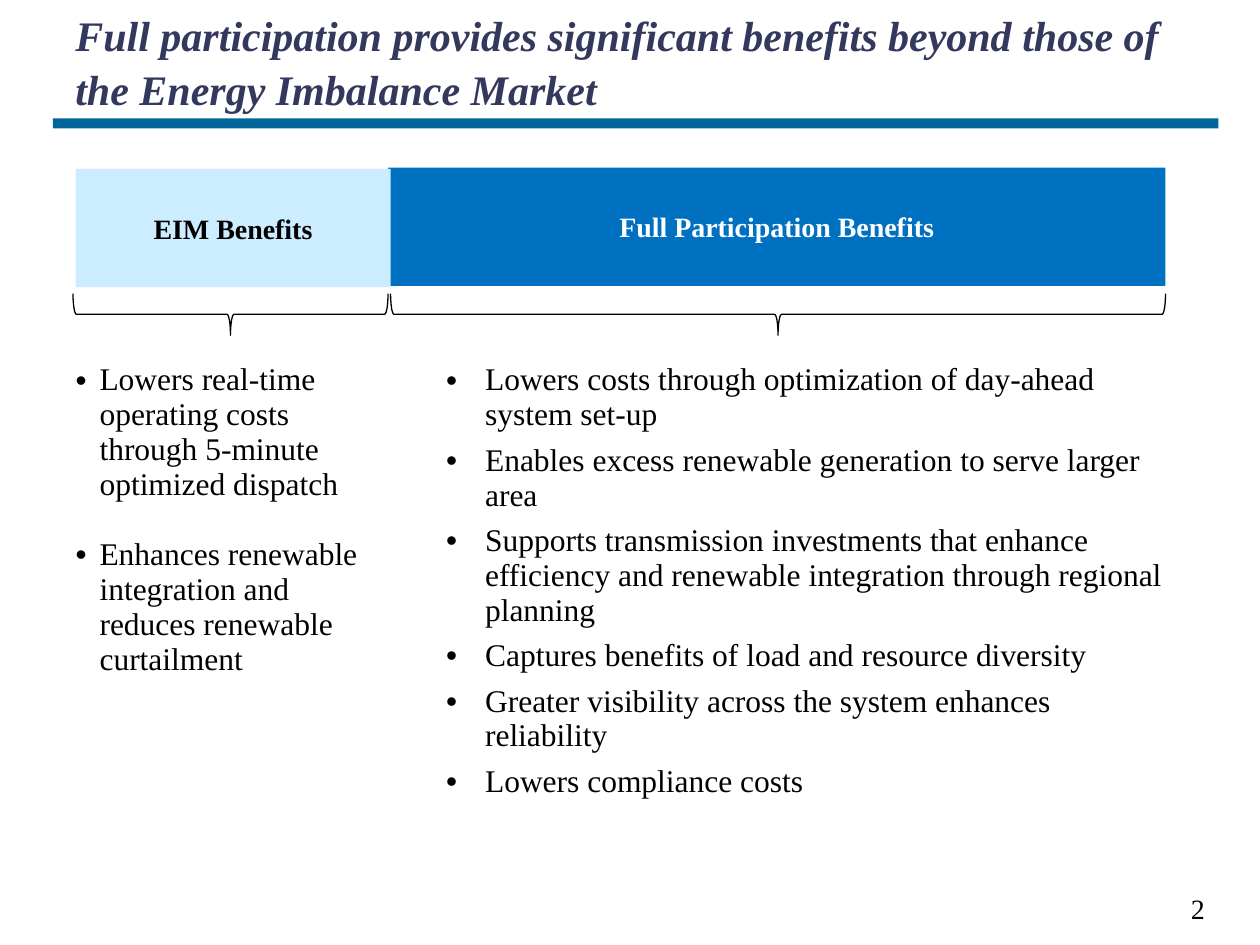
from pptx import Presentation
from pptx.dml.color import RGBColor
from pptx.enum.shapes import MSO_SHAPE as Shape
from pptx.enum.text import MSO_ANCHOR as Anchor, PP_ALIGN as Align
from pptx.util import Inches, Pt
from lxml.etree import SubElement as Sub
from pptx.oxml.ns import qn

FONT = "Times New Roman"
LEFT = [
    "Lowers real-time operating costs through 5-minute optimized dispatch",
    "Enhances renewable integration and reduces renewable curtailment",
]
RIGHT = [
    "Lowers costs through optimization of day-ahead system set-up",
    "Enables excess renewable generation to serve larger area",
    "Supports transmission investments that enhance efficiency and renewable integration through regional planning",
    "Captures benefits of load and resource diversity",
    "Greater visibility across the system enhances reliability",
    "Lowers compliance costs",
]


def color(code):
    return RGBColor.from_string(code)


def write(para, text, size=18, fill="000000", bold=False, italic=False,
          align=Align.LEFT, lines=None, after=0, indent=None):
    para.alignment = align
    para.space_after = Pt(after)
    if lines:
        para.line_spacing = lines
    if indent:
        left, hang = indent
        props = para._p.get_or_add_pPr()
        props.set("marL", str(Inches(left)))
        props.set("indent", str(-Inches(hang)))
        Sub(props, qn("a:buFont"), typeface="Arial")
        Sub(props, qn("a:buChar"), char="•")
    run = para.add_run()
    run.text = text
    font = run.font
    font.name, font.size, font.bold, font.italic = FONT, Pt(size), bold, italic
    font.color.rgb = color(fill)


def label(slide, box, text, anchor=Anchor.TOP, **form):
    frame = slide.shapes.add_textbox(*map(Inches, box)).text_frame
    frame.word_wrap = True
    frame.vertical_anchor = anchor
    write(frame.paragraphs[0], text, **form)
    return frame


def block(slide, box, fill):
    shape = slide.shapes.add_shape(Shape.RECTANGLE, *map(Inches, box))
    shape.shadow.inherit = False
    shape.fill.solid()
    shape.fill.fore_color.rgb = color(fill)
    shape.line.fill.background()
    return shape


def header(slide, box):
    left, top, width, height = box
    block(slide, (0.42, 0.94, 9.25, 0.08), "006699")
    frame = label(slide, box, "Full participation provides significant benefits "
                  "beyond those of the Energy Imbalance Market", size=24,
                  fill="33385D", bold=True, italic=True, lines=1.07)
    frame.margin_left = Inches(0.1)


def band(slide, box, text, fill, ink):
    shape = block(slide, box, fill)
    frame = shape.text_frame
    frame.word_wrap = True
    frame.vertical_anchor = Anchor.MIDDLE
    write(frame.paragraphs[0], text, size=16, fill=ink, bold=True, align=Align.CENTER)


def brace(slide, box):
    left, top, width, height = box
    mid, row = left + width / 2, top + height / 2
    shape = slide.shapes.add_shape(
        Shape.LEFT_BRACE, Inches(mid - height / 2), Inches(row - width / 2),
        Inches(height), Inches(width))
    shape.rotation = 270
    shape.shadow.inherit = False
    shape.fill.background()
    shape.line.color.rgb = color("000000")
    shape.line.width = Pt(0.75)


def points(slide, box, widths):
    table = slide.shapes.add_table(1, 2, *map(Inches, box)).table
    table.first_row = table.horz_banding = False
    forms = [(LEFT, 20, (0.19, 0.19)), (RIGHT, 6, (0.75, 0.31))]
    for num, (items, after, indent) in enumerate(forms):
        table.columns[num].width = Inches(widths[num])
        cell = table.cell(0, num)
        cell.fill.solid()
        cell.fill.fore_color.rgb = color("FFFFFF")
        frame = cell.text_frame
        for pos, item in enumerate(items):
            para = frame.add_paragraph() if pos else frame.paragraphs[0]
            write(para, item, after=after, indent=indent)


def main():
    deck = Presentation()
    deck.slide_width, deck.slide_height = Inches(10), Inches(7.5)
    slide = deck.slides.add_slide(deck.slide_layouts[6])
    header(slide, (0.5, 0, 9, 1.1))
    points(slide, (0.5, 2.83, 8.87, 4.2), (2.5, 6.37))
    band(slide, (3.08, 1.33, 6.17, 0.94), "Full Participation Benefits", "0070C0", "FFFFFF")
    band(slide, (0.6, 1.34, 2.5, 0.94), "EIM Benefits", "CCECFF", "000000")
    brace(slide, (0.58, 2.33, 2.5, 0.33))
    brace(slide, (3.1, 2.33, 6.15, 0.33))
    label(slide, (8.58, 7.02, 1.08, 0.37), "2", anchor=Anchor.MIDDLE,
          size=16, align=Align.RIGHT)
    deck.save("out.pptx")


if __name__ == "__main__":
    main()
